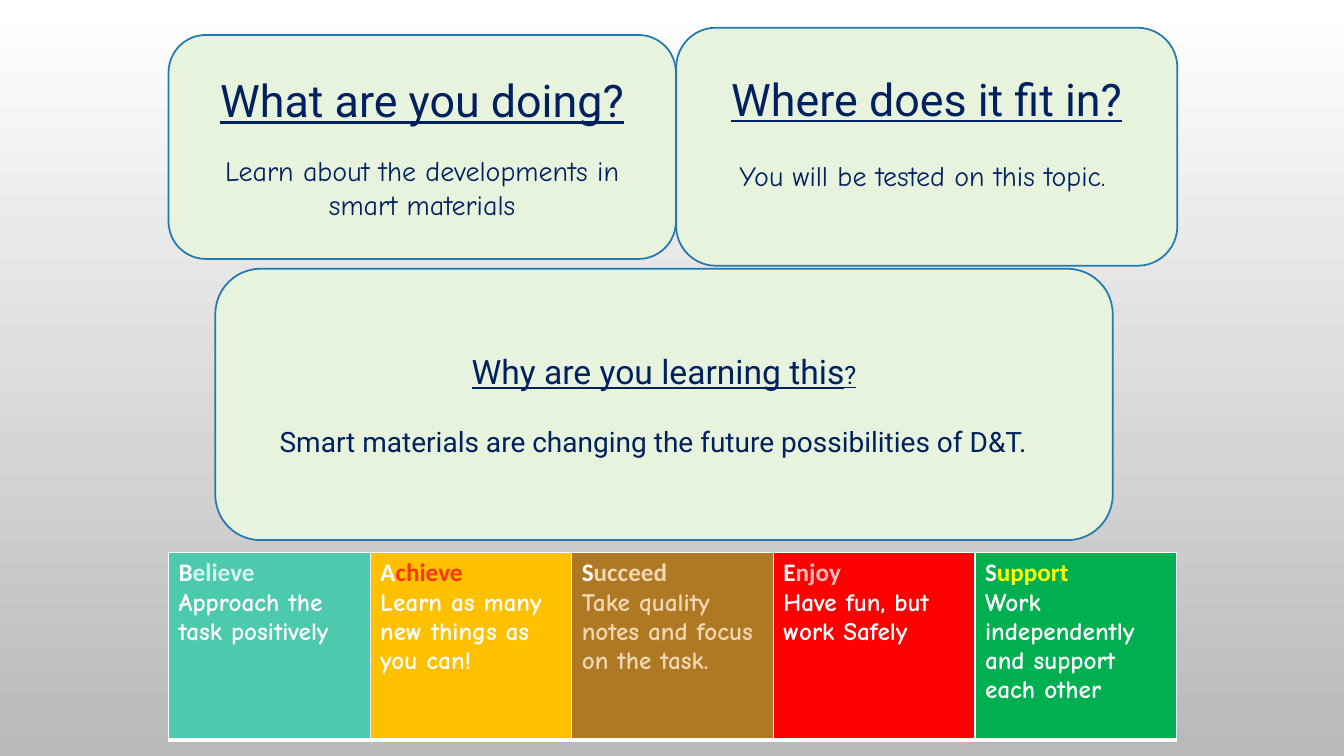
from dataclasses import dataclass

from lxml import etree
from pptx import Presentation
from pptx.dml.color import RGBColor
from pptx.enum.shapes import MSO_SHAPE
from pptx.enum.text import MSO_ANCHOR, PP_ALIGN
from pptx.oxml.ns import qn
from pptx.util import Pt

ROUNDED = MSO_SHAPE.ROUNDED_RECTANGLE
MIDDLE = MSO_ANCHOR.MIDDLE
CENTER = PP_ALIGN.CENTER


@dataclass(frozen=True)
class Theme:
    backdrop: tuple = ("FFFFFF", "B9B9B9")
    panel: str = "E7F3DD"
    outline: str = "2379B0"
    ink: str = "002060"
    white: str = "FFFFFF"
    plain: str = "Roboto"
    comic: str = "Comic Neue"
    label: str = "Calibri"
    heading: int = 32
    subheading: int = 24
    body: int = 20
    small: int = 18
    panel_line: float = 1.25


THEME = Theme()

PANELS = [
    {
        "box": (120.4, 25, 362.4, 160),
        "question": [("What are you doing?", THEME.heading)],
        "answer": "Learn about the developments in smart materials",
        "answer_font": THEME.comic,
        "gap": 19, "shift": 0, "lift": 0,
    },
    {
        "box": (483, 19.8, 358, 170),
        "question": [("Where does it fit in?", THEME.heading)],
        "answer": "You will be tested on this topic.",
        "answer_font": THEME.comic,
        "gap": 23.4, "shift": 6, "lift": 21,
    },
    {
        "box": (153.8, 192, 641, 193.8),
        "question": [("Why are you learning this", THEME.subheading), ("?", THEME.small)],
        "answer": "Smart materials are changing the future possibilities of D&T.",
        "answer_font": THEME.plain,
        "gap": 23.4, "shift": 15, "lift": 0,
    },
]

VALUES_BOX = (120.4, 394.8, 720, 134)
VALUES = [
    ("Believe", "Approach the task positively", "4BCAAD", "DBF4EF", THEME.white),
    ("Achieve", "Learn as many new things as you can!", "FFC000", "FF3300", THEME.white),
    ("Succeed", "Take quality notes and focus on the task.", "AF7823", "F0D7B2", "F0D7B2"),
    ("Enjoy", "Have fun, but work Safely", "FF0000", "FFBDBD", THEME.white),
    ("Support", "Work independently and support each other", "00B050", "FFFF00", THEME.white),
]
BORDERS = {"a:lnL": 1, "a:lnR": 1, "a:lnT": 1, "a:lnB": 3}


def rgb(color):
    return RGBColor.from_string(color)


def add_run(paragraph, text, color, **format_values):
    run = paragraph.add_run()
    run.text = text
    run.font.color.rgb = rgb(color)
    for attribute, value in format_values.items():
        setattr(run.font, attribute, value)


def paint_background(slide):
    fill = slide.background.fill
    fill.gradient()
    fill.gradient_angle = 270
    for position, (stop, color) in enumerate(zip(fill.gradient_stops, THEME.backdrop)):
        stop.position = position
        stop.color.rgb = rgb(color)


def add_panel(slide, box, question, answer, answer_font, gap, shift, lift):
    panel = slide.shapes.add_shape(ROUNDED, *map(Pt, box))
    panel.shadow.inherit = False
    panel.fill.solid()
    panel.fill.fore_color.rgb = rgb(THEME.panel)
    panel.line.color.rgb = rgb(THEME.outline)
    panel.line.width = Pt(THEME.panel_line)

    frame = panel.text_frame
    frame_format = {
        "word_wrap": True,
        "vertical_anchor": MIDDLE,
        "margin_bottom": Pt(3.6 + lift),
    }
    for attribute, value in frame_format.items():
        setattr(frame, attribute, value)

    question_line = frame.paragraphs[0]
    question_line.alignment = CENTER
    for text, size in question:
        add_run(question_line, text, THEME.ink, name=THEME.plain, size=Pt(size), underline=True)

    answer_line = frame.add_paragraph()
    answer_line.alignment = CENTER
    answer_line.space_before = Pt(gap)
    answer_line._p.get_or_add_pPr().set("marR", str(Pt(shift)))
    add_run(answer_line, answer, THEME.ink, name=answer_font, size=Pt(THEME.body))


def add_borders(cell):
    properties = cell._tc.get_or_add_tcPr()
    for side, width in BORDERS.items():
        border = etree.SubElement(properties, qn(side), w=str(Pt(width)))
        solid = etree.SubElement(border, qn("a:solidFill"))
        etree.SubElement(solid, qn("a:srgbClr"), val=THEME.white)


def fill_value(cell, value, advice, background, value_color, advice_color):
    add_borders(cell)
    cell.fill.solid()
    cell.fill.fore_color.rgb = rgb(background)
    font_format = {"size": Pt(THEME.small), "bold": True}
    value_line = cell.text_frame.paragraphs[0]
    add_run(value_line, value[0], THEME.white, name=THEME.label, **font_format)
    add_run(value_line, value[1:], value_color, name=THEME.label, **font_format)
    advice_line = cell.text_frame.add_paragraph()
    add_run(advice_line, advice, advice_color, name=THEME.comic, **font_format)


def add_values(slide, box):
    table = slide.shapes.add_table(1, len(VALUES), *map(Pt, box)).table
    table.first_row = False
    table.horz_banding = False
    for cell, value in zip(table.rows[0].cells, VALUES):
        fill_value(cell, *value)


def main():
    presentation = Presentation()
    presentation.slide_width = Pt(960)
    presentation.slide_height = Pt(540)
    slide = presentation.slides.add_slide(presentation.slide_layouts[6])
    paint_background(slide)
    for panel in PANELS:
        add_panel(slide, **panel)
    add_values(slide, VALUES_BOX)
    presentation.save("out.pptx")


if __name__ == "__main__":
    main()
